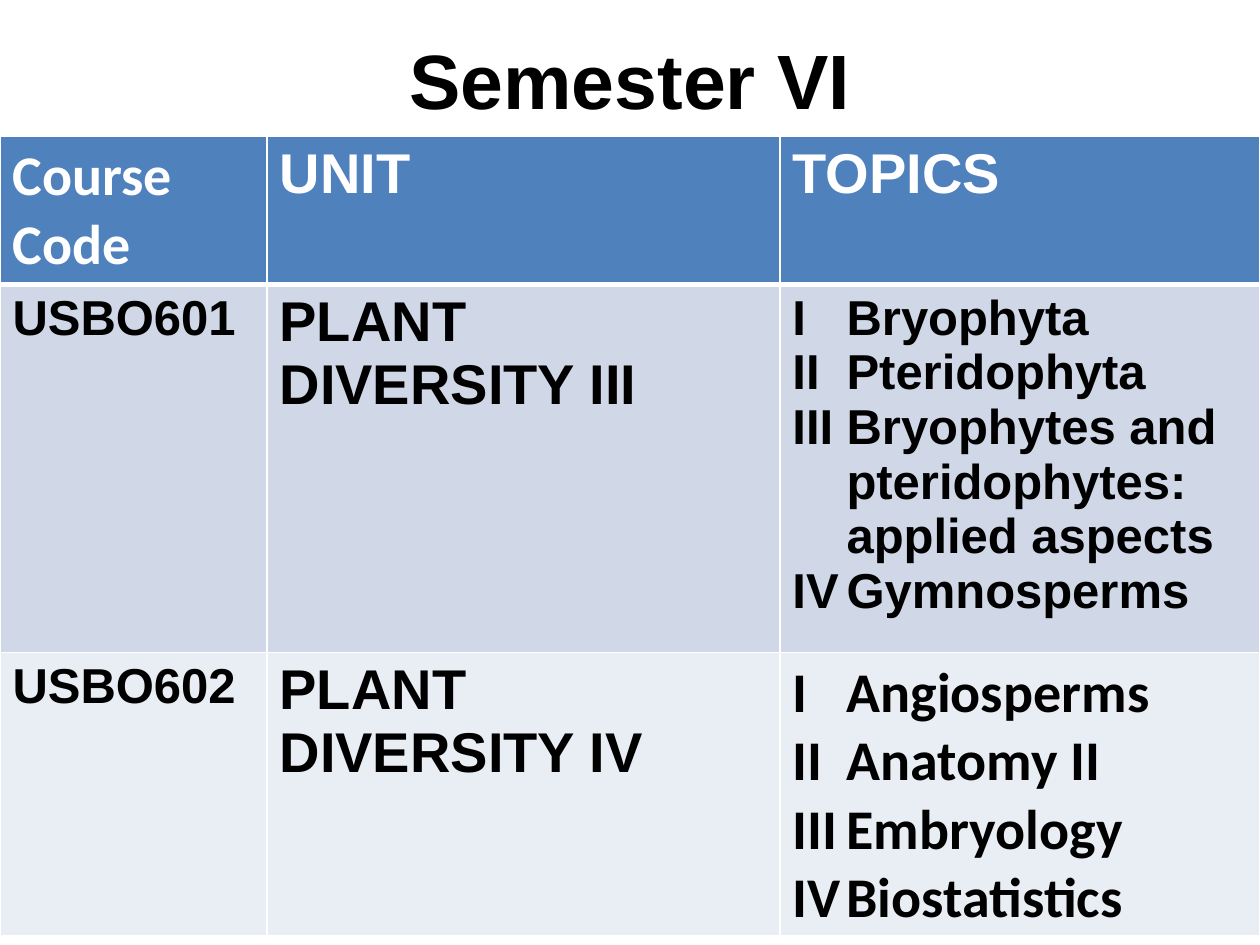
from lxml import etree
from pptx import Presentation
from pptx.dml.color import RGBColor
from pptx.enum.text import MSO_ANCHOR, PP_ALIGN
from pptx.oxml.ns import qn
from pptx.util import Inches, Pt

CENTER = PP_ALIGN.CENTER
MIDDLE = MSO_ANCHOR.MIDDLE

BLACK = RGBColor(0x00, 0x00, 0x00)
WHITE = RGBColor(0xFF, 0xFF, 0xFF)
HEADER_BLUE = RGBColor(0x4F, 0x81, 0xBD)
BAND_DARK = RGBColor(0xD0, 0xD8, 0xE8)
BAND_LIGHT = RGBColor(0xE9, 0xED, 0xF4)

SLIDE_WIDTH, SLIDE_HEIGHT = Inches(10), Inches(7.5)
TOPIC_INDENT = Inches(0.43)

COLUMN_SHARES = (0.212, 0.407, 0.381)
ROW_INCHES = (1.18, 2.92, 2.25)
ROW_FILLS = (HEADER_BLUE, BAND_DARK, BAND_LIGHT)
ROW_INKS = (WHITE, BLACK, BLACK)

# Each cell: font, size, lines. A topic line is a (numeral, topic) pair.
COURSES = (
    (
        ("Calibri", 32, ["Course Code"]),
        ("Arial", 32, ["UNIT"]),
        ("Arial", 32, ["TOPICS"]),
    ),
    (
        ("Arial", 28, ["USBO601"]),
        ("Arial", 32, ["PLANT DIVERSITY III"]),
        ("Arial", 28, [
            ("I", "Bryophyta"),
            ("II", "Pteridophyta"),
            ("III", "Bryophytes and"),
            ("", "pteridophytes:"),
            ("", "applied aspects"),
            ("IV", "Gymnosperms"),
        ]),
    ),
    (
        ("Arial", 28, ["USBO602"]),
        ("Arial", 32, ["PLANT DIVERSITY IV"]),
        ("Calibri", 32, [
            ("I", "Angiosperms"),
            ("II", "Anatomy II"),
            ("III", "Embryology"),
            ("IV", "Biostatistics"),
        ]),
    ),
)


class SyllabusSlide:
    def __init__(self, presentation):
        self.slide = presentation.slides.add_slide(presentation.slide_layouts[6])

    def add_text(self, paragraph, text, font, size, ink):
        run = paragraph.add_run()
        run.text = text
        run.font.color.rgb = ink
        for attribute, value in {"name": font, "size": Pt(size), "bold": True}.items():
            setattr(run.font, attribute, value)

    def title(self, text, left, top, width, height):
        """Place a centred title; lengths are shares of the slide."""
        box = self.slide.shapes.add_textbox(
            int(SLIDE_WIDTH * left), int(SLIDE_HEIGHT * top),
            int(SLIDE_WIDTH * width), int(SLIDE_HEIGHT * height))
        frame = box.text_frame
        for attribute, value in {"word_wrap": True, "vertical_anchor": MIDDLE}.items():
            setattr(frame, attribute, value)
        heading = frame.paragraphs[0]
        heading.alignment = CENTER
        self.add_text(heading, text, "Arial", 44, BLACK)

    def indent_topic(self, paragraph, numbered):
        """Line topics up by a tab after a numeral, or by a margin without one."""
        properties = paragraph._p.get_or_add_pPr()
        if numbered:
            stops = etree.SubElement(properties, qn("a:tabLst"))
            etree.SubElement(stops, qn("a:tab"), pos=str(TOPIC_INDENT), algn="l")
        else:
            properties.set("marL", str(TOPIC_INDENT))

    def borders(self, cell, bottom_width):
        properties = cell._tc.get_or_add_tcPr()
        widths = {"L": 1, "R": 1, "T": 1, "B": bottom_width}
        for position, (side, width) in enumerate(widths.items()):
            line = etree.Element(qn(f"a:ln{side}"), w=str(Pt(width)))
            fill = etree.SubElement(line, qn("a:solidFill"))
            etree.SubElement(fill, qn("a:srgbClr"), val=str(WHITE))
            properties.insert(position, line)

    def cell(self, cell, content, fill, ink, bottom_width):
        font, size, lines = content
        cell.fill.solid()
        cell.fill.fore_color.rgb = fill
        self.borders(cell, bottom_width)
        frame = cell.text_frame
        for index, line in enumerate(lines):
            paragraph = frame.add_paragraph() if index else frame.paragraphs[0]
            if isinstance(line, tuple):
                numeral, topic = line
                self.indent_topic(paragraph, bool(numeral))
                line = f"{numeral}\t{topic}" if numeral else topic
            self.add_text(paragraph, line, font, size, ink)

    def table(self, rows, top):
        """Place a full-width table; top is a share of the slide height."""
        table = self.slide.shapes.add_table(
            len(rows), len(COLUMN_SHARES), 0, int(SLIDE_HEIGHT * top),
            SLIDE_WIDTH, Inches(sum(ROW_INCHES))).table
        for column, share in zip(table.columns, COLUMN_SHARES):
            column.width = int(SLIDE_WIDTH * share)
        for r, contents in enumerate(rows):
            table.rows[r].height = Inches(ROW_INCHES[r])
            for c, content in enumerate(contents):
                self.cell(table.cell(r, c), content, ROW_FILLS[r], ROW_INKS[r],
                          bottom_width=1 if r else 3)


def main():
    presentation = Presentation()
    presentation.slide_width = SLIDE_WIDTH
    presentation.slide_height = SLIDE_HEIGHT
    semester = SyllabusSlide(presentation)
    semester.title("Semester VI", 0.05, 0, 0.9, 1.25 / 7.5)
    semester.table(COURSES, 1.08 / 7.5)
    presentation.save("out.pptx")


if __name__ == "__main__":
    main()
